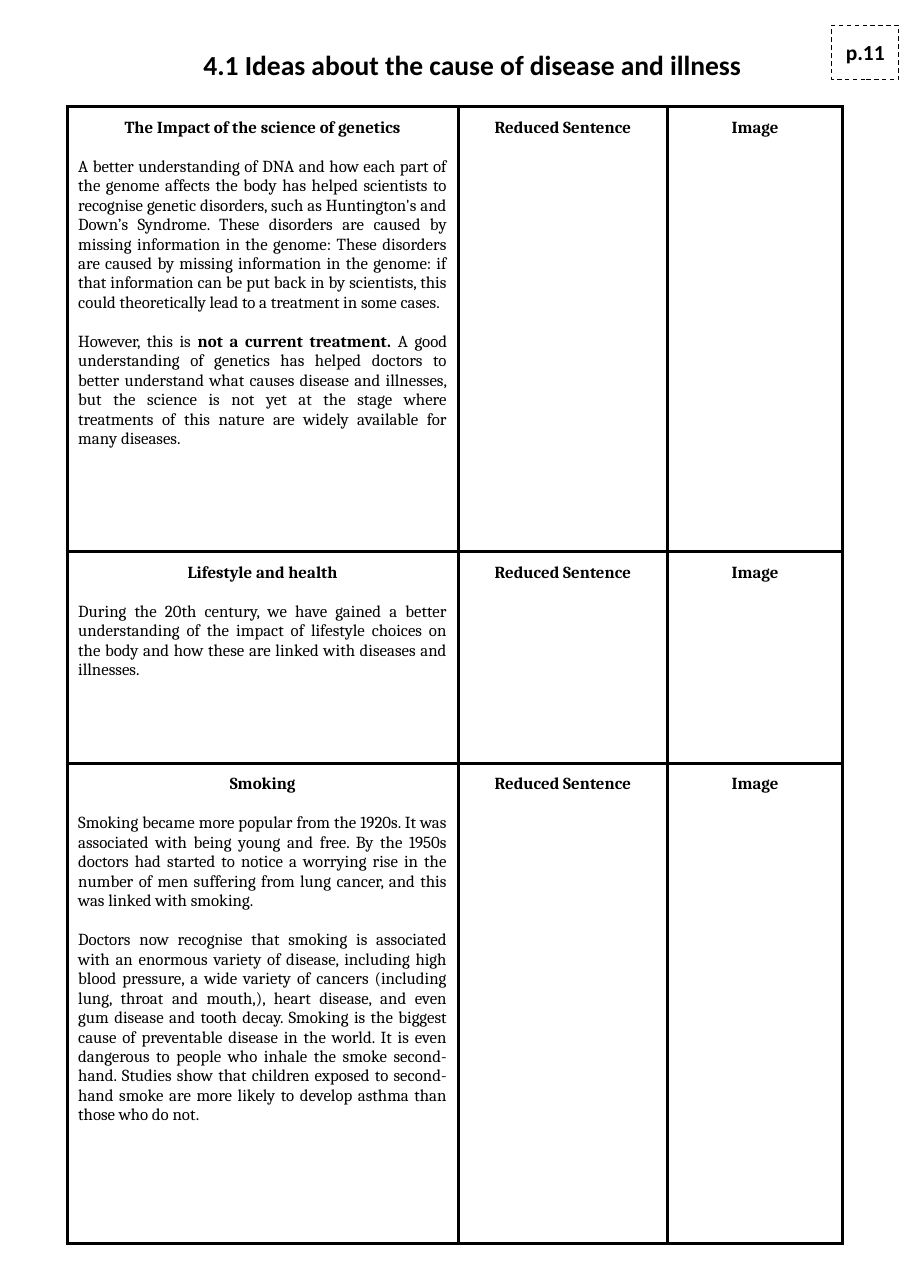
from lxml.etree import SubElement
from pptx import Presentation
from pptx.dml.color import RGBColor
from pptx.enum.dml import MSO_LINE
from pptx.enum.shapes import MSO_SHAPE
from pptx.enum.text import MSO_ANCHOR, PP_ALIGN
from pptx.oxml.ns import qn
from pptx.util import Inches, Pt

WIDTH, HEIGHT = 8.27, 11.69
PAD = Inches(0.1)
BLACK, WHITE = "000000", "FFFFFF"
COLS = [3.55, 1.9, 1.59]
ROWS = [4.04, 1.92, 4.36]
GAP = 12.75  # one line of body text, in points

# Text between ** marks is bold.
TOPICS = [
    ("The Impact of the science of genetics", [
        "A better understanding of DNA and how each part of the genome affects "
        "the body has helped scientists to recognise genetic disorders, such as "
        "Huntington's and Down’s Syndrome. These disorders are caused by missing "
        "information in the genome: These disorders are caused by missing "
        "information in the genome: if that information can be put back in by "
        "scientists, this could theoretically lead to a treatment in some cases.",
        "However, this is **not a current treatment. **A good understanding of "
        "genetics has helped doctors to better understand what causes disease "
        "and illnesses, but the science is not yet at the stage where treatments "
        "of this nature are widely available for many diseases.",
    ]),
    ("Lifestyle and health", [
        "During the 20th century, we have gained a better understanding of the "
        "impact of lifestyle choices on the body and how these are linked with "
        "diseases and illnesses.",
    ]),
    ("Smoking", [
        "Smoking became more popular from the 1920s. It was associated with "
        "being young and free. By the 1950s doctors had started to notice a "
        "worrying rise in the number of men suffering from lung cancer, and this "
        "was linked with smoking.",
        "Doctors now recognise that smoking is associated with an enormous "
        "variety of disease, including high blood pressure, a wide variety of "
        "cancers (including lung, throat and mouth,), heart disease, and even "
        "gum disease and tooth decay. Smoking is the biggest cause of "
        "preventable disease in the world. It is even dangerous to people who "
        "inhale the smoke second-hand. Studies show that children exposed to "
        "second-hand smoke are more likely to develop asthma than those who do "
        "not.",
    ]),
]


def color(code):
    return RGBColor.from_string(code)


def style(run, face, size, bold):
    font = run.font
    font.name, font.size, font.bold = face, Pt(size), bold
    font.color.rgb = color(BLACK)


def pad(box):
    box.margin_left = box.margin_right = PAD
    box.margin_top = box.margin_bottom = PAD


def label(shape, text, size):
    """Put one bold centred line in the middle of a shape."""
    frame = shape.text_frame
    frame.text = text
    frame.word_wrap = True
    frame.vertical_anchor = MSO_ANCHOR.MIDDLE
    pad(frame)
    para = frame.paragraphs[0]
    para.alignment = PP_ALIGN.CENTER
    style(para.runs[0], "Calibri", size, True)


def border(cell):
    props = cell._tc.get_or_add_tcPr()
    for side in ("lnL", "lnR", "lnT", "lnB"):
        line = SubElement(props, qn(f"a:{side}"), w=str(Pt(2.25)))
        fill = SubElement(line, qn("a:solidFill"))
        SubElement(fill, qn("a:srgbClr"), val=BLACK)


def fill_cell(cell, head, body=()):
    """Write a bold centred heading and justified paragraphs below it."""
    border(cell)
    cell.fill.background()
    pad(cell)
    frame = cell.text_frame
    frame.text = head
    para = frame.paragraphs[0]
    para.alignment = PP_ALIGN.CENTER
    style(para.runs[0], "Cambria", 11, True)
    for text in body:
        para = frame.add_paragraph()
        para.alignment = PP_ALIGN.JUSTIFY
        para.space_before = Pt(GAP)
        for i, part in enumerate(text.split("**")):
            run = para.add_run()
            run.text = part
            style(run, "Cambria", 11, i % 2 == 1)


def add_grid(slide, left, top):
    table = slide.shapes.add_table(
        len(ROWS), len(COLS), Inches(left), Inches(top),
        Inches(sum(COLS)), Inches(sum(ROWS))).table
    table.first_row = table.horz_banding = False
    for col, width in zip(table.columns, COLS):
        col.width = Inches(width)
    for row, height, (head, body) in zip(table.rows, ROWS, TOPICS):
        row.height = Inches(height)
        topic, reduced, image = row.cells
        fill_cell(topic, head, body)
        fill_cell(reduced, "Reduced Sentence")
        fill_cell(image, "Image")


def add_title(slide, text, *area):
    label(slide.shapes.add_textbox(*map(Inches, area)), text, 18)


def add_tag(slide, text, *area):
    """Add the dashed page-number box."""
    tag = slide.shapes.add_shape(MSO_SHAPE.RECTANGLE, *map(Inches, area))
    tag.shadow.inherit = False
    tag.fill.solid()
    tag.fill.fore_color.rgb = color(WHITE)
    tag.line.color.rgb = color(BLACK)
    tag.line.width = Pt(0.75)
    tag.line.dash_style = MSO_LINE.DASH
    label(tag, text, 14)


def main():
    deck = Presentation()
    deck.slide_width, deck.slide_height = Inches(WIDTH), Inches(HEIGHT)
    slide = deck.slides.add_slide(deck.slide_layouts[6])
    add_grid(slide, 0.61, 0.97)
    add_title(slide, "4.1 Ideas about the cause of disease and illness",
              0.77, 0.37, sum(COLS), 0.44)
    add_tag(slide, "p.11", 7.55, 0.23, 0.61, 0.49)
    deck.save("out.pptx")


if __name__ == "__main__":
    main()
